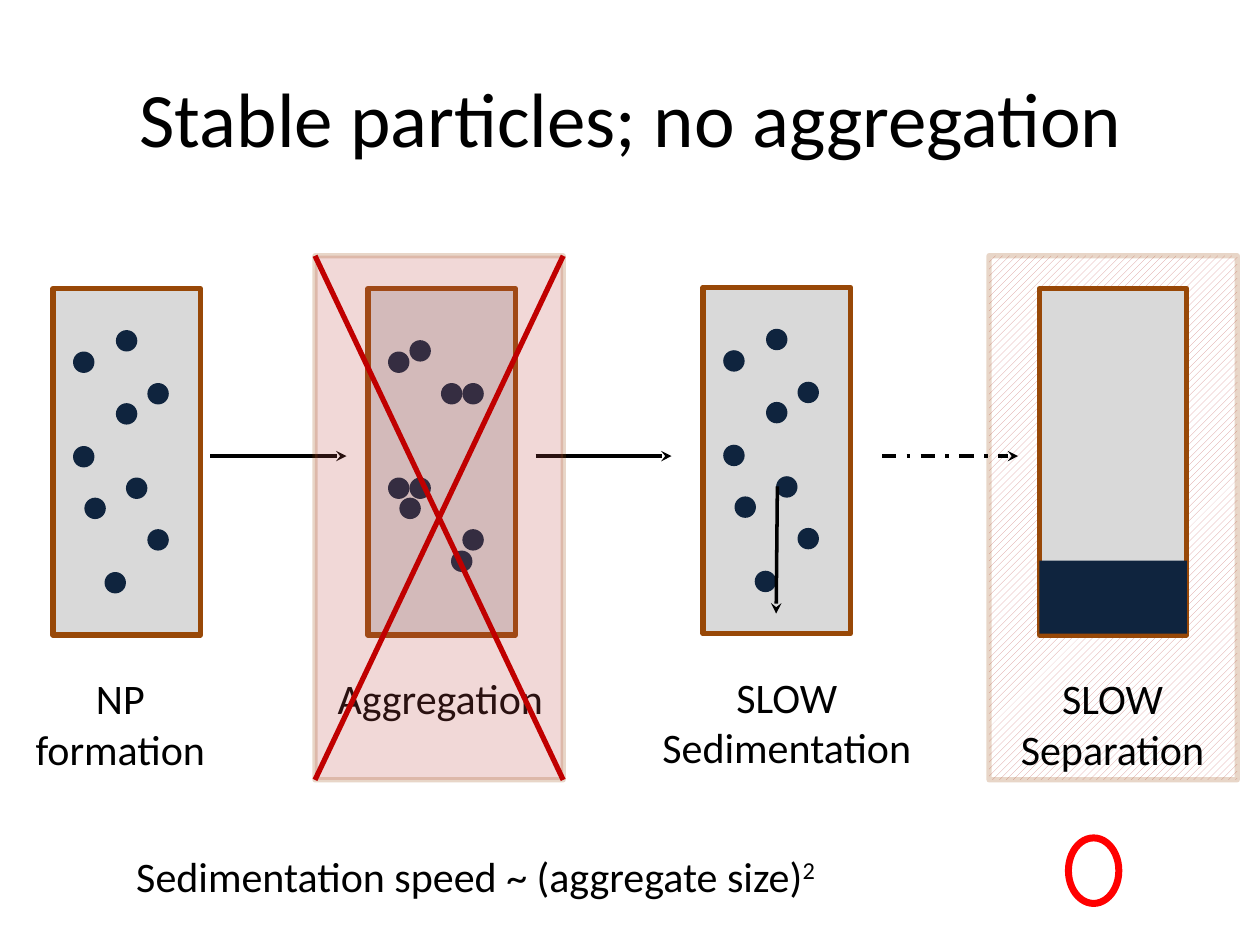
import dataclasses

import pptx
import pptx.dml.color
import pptx.enum.dml
import pptx.enum.shapes
import pptx.enum.text
import pptx.oxml
import pptx.oxml.ns
import pptx.util

Inches = pptx.util.Inches
Pt = pptx.util.Pt
RGB = pptx.dml.color.RGBColor.from_string
SHAPE = pptx.enum.shapes.MSO_SHAPE
DASH = pptx.enum.dml.MSO_LINE
ANCHOR = pptx.enum.text.MSO_ANCHOR
CENTER = pptx.enum.text.PP_ALIGN.CENTER
qn = pptx.oxml.ns.qn


@dataclasses.dataclass(frozen=True)
class Theme:
    font: str = "Calibri"
    title_size: int = 44
    body_size: int = 24
    text: str = "000000"
    jar: str = "D9D9D9"
    edge: str = "984807"
    particle: str = "0F243E"
    hatch: str = "D99694"
    paper: str = "FFFFFF"
    veil: str = "C0504D"
    cross: str = "C00000"
    ring: str = "FF0000"
    veil_alpha: int = 22
    edge_width: int = 3
    arrow_width: int = 2
    ring_width: int = 4


THEME = Theme()
JAR_W, JAR_H, DOT = 1.17, 2.75, 0.17
DISPERSED = [(0.5, 0.33), (0.75, 0.75), (0.16, 0.5), (0.5, 0.91), (0.16, 1.25),
             (0.75, 1.91), (0.58, 1.5), (0.41, 2.25), (0.25, 1.66)]
CLUSTERED = [(0.33, 0.41), (0.75, 0.75), (0.16, 0.5), (0.58, 0.75), (0.16, 1.5),
             (0.75, 1.91), (0.33, 1.5), (0.66, 2.08), (0.25, 1.66)]
JARS = [(0.42, 2.29, DISPERSED), (2.92, 2.29, CLUSTERED),
        (5.58, 2.28, DISPERSED), (8.25, 2.29, [])]
LABELS = [("NP formation", 0.08, 5.29, 1.75, 0.91),
          ("Aggregation", 2.33, 5.29, 2.33, 0.5),
          ("SLOW Sedimentation", 5.08, 5.28, 2.33, 0.91),
          ("SLOW Separation", 7.83, 5.29, 2, 0.91)]


def set_attrs(obj, formats):
    for name, value in formats.items():
        setattr(obj, name, value)


def box(*at):
    return [Inches(v) for v in at]


def set_alpha(color_parent, percent):
    for clr in color_parent.iter(qn("a:srgbClr")):
        clr.append(pptx.oxml.parse_xml(
            f'<a:alpha xmlns:a="{pptx.oxml.ns.nsuri("a")}" val="{percent * 1000}"/>'))


def add_shape(s, kind, at, fill=None, line=None, width=THEME.edge_width):
    sp = s.shapes.add_shape(kind, *box(*at))
    sp.shadow.inherit = False
    if fill:
        sp.fill.solid()
        sp.fill.fore_color.rgb = RGB(fill)
    else:
        sp.fill.background()
    if line:
        sp.line.color.rgb = RGB(line)
        sp.line.width = Pt(width)
    else:
        sp.line.fill.background()
    return sp


def add_line(s, start, end, color, width, dash=None, arrow=False):
    cx = s.shapes.add_connector(pptx.enum.shapes.MSO_CONNECTOR.STRAIGHT,
                                *box(*start, *end))
    cx.line.color.rgb = RGB(color)
    set_attrs(cx.line, {"width": Pt(width), "dash_style": dash})
    if arrow:
        ln = cx.line.fill and cx.element.spPr.find(qn("a:ln"))
        tail = pptx.oxml.parse_xml(
            f'<a:tailEnd xmlns:a="{pptx.oxml.ns.nsuri("a")}" type="stealth"/>')
        ln.append(tail)
    cx.element.spPr.append(pptx.oxml.parse_xml(
        f'<a:effectLst xmlns:a="{pptx.oxml.ns.nsuri("a")}"/>'))


def add_arrow(s, start, end, dash=None):
    add_line(s, start, end, THEME.text, THEME.arrow_width, dash, arrow=True)


def add_run(p, text, size):
    r = p.add_run()
    r.text = text
    set_attrs(r.font, {"name": THEME.font, "size": Pt(size)})
    r.font.color.rgb = RGB(THEME.text)
    return r


def add_text(s, text, *at):
    tf = s.shapes.add_textbox(*box(*at)).text_frame
    set_attrs(tf, {"word_wrap": True,
                   "auto_size": pptx.enum.text.MSO_AUTO_SIZE.SHAPE_TO_FIT_TEXT})
    p = tf.paragraphs[0]
    p.alignment = CENTER
    add_run(p, text, THEME.body_size)
    return p


def set_title(s, text, at):
    title = s.shapes.title
    set_attrs(title, dict(zip(("left", "top", "width", "height"), box(*at))))
    tf = title.text_frame
    tf.vertical_anchor = ANCHOR.MIDDLE
    p = tf.paragraphs[0]
    p.alignment = CENTER
    add_run(p, text, THEME.title_size)


def add_jar(s, x, y, dots):
    add_shape(s, SHAPE.RECTANGLE, (x, y, JAR_W, JAR_H), THEME.jar, THEME.edge)
    for dx, dy in dots:
        add_shape(s, SHAPE.OVAL, (x + dx, y + dy, DOT, DOT), THEME.particle)


def add_hatched_panel(s, at):
    sp = add_shape(s, SHAPE.RECTANGLE, at, line=THEME.edge)
    set_alpha(sp.element.spPr.find(qn("a:ln")), THEME.veil_alpha)
    sp.fill.patterned()
    sp.fill.pattern = pptx.enum.dml.MSO_PATTERN.WIDE_UPWARD_DIAGONAL
    sp.fill.fore_color.rgb = RGB(THEME.hatch)
    sp.fill.back_color.rgb = RGB(THEME.paper)


def add_crossed_panel(s, x, y, w, h):
    sp = add_shape(s, SHAPE.RECTANGLE, (x, y, w, h), THEME.veil, THEME.edge)
    set_alpha(sp.element.spPr, THEME.veil_alpha)
    for x1, x2 in ((x + w, x), (x, x + w)):
        add_line(s, (x1, y), (x2, y + h), THEME.cross, THEME.edge_width)


def main():
    prs = pptx.Presentation()
    set_attrs(prs, {"slide_width": Inches(10), "slide_height": Inches(7.5)})
    s = prs.slides.add_slide(prs.slide_layouts.get_by_name("Title Only"))
    set_title(s, "Stable particles; no aggregation", (0.18, 0.3, 9.66, 1.25))

    add_hatched_panel(s, (7.85, 2.03, 1.97, 4.16))
    for jar in JARS:
        add_jar(s, *jar)
    add_shape(s, SHAPE.RECTANGLE, (8.25, 4.45, JAR_W, 0.58), THEME.particle)
    for label in LABELS:
        add_text(s, *label)

    for x, dash in ((1.67, None), (4.25, None), (7, DASH.DASH_DOT)):
        add_arrow(s, (x, 3.62), (x + 1.08, 3.62), dash)
    add_arrow(s, (6.17, 3.86), (6.16, 4.87))

    p = add_text(s, "Sedimentation speed ~ (aggregate size)", 0.65, 6.7, 6.25, 0.5)
    exponent = add_run(p, "2", THEME.body_size)
    exponent.font._element.set("baseline", "30000")

    add_crossed_panel(s, 2.5, 2.03, 1.97, 4.16)
    add_shape(s, SHAPE.OVAL, (8.48, 6.65, 0.4, 0.52),
              line=THEME.ring, width=THEME.ring_width)
    prs.save("out.pptx")


if __name__ == "__main__":
    main()
